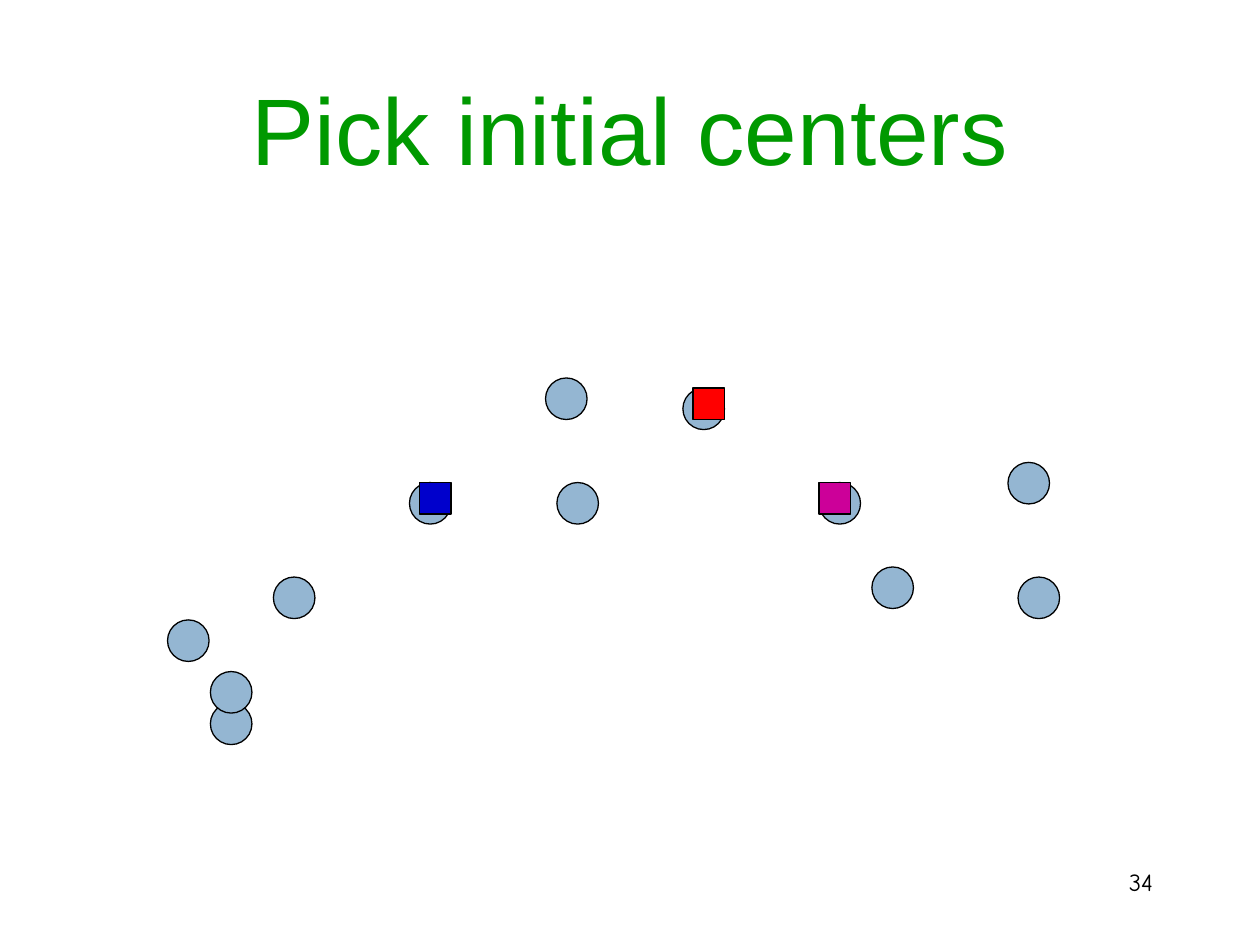
import pptx
import pptx.dml.color
import pptx.enum.shapes
import pptx.enum.text
import pptx.util

Inches = pptx.util.Inches
Shape = pptx.enum.shapes.MSO_SHAPE
Align = pptx.enum.text.PP_ALIGN
Anchor = pptx.enum.text.MSO_ANCHOR

POINT_SIZE = 0.33
CENTER_SIZE = 0.25
POINTS = [
    (1.67, 5.58), (1.33, 4.92), (2.17, 4.58), (8, 3.67),
    (4.33, 3), (5.42, 3.08), (4.42, 3.83), (3.25, 3.83),
    (8.08, 4.58), (6.5, 3.83), (1.67, 5.33), (6.92, 4.5),
]
CENTERS = [
    (3.33, 3.83, "0000CC"),
    (5.5, 3.08, "FF0000"),
    (6.5, 3.83, "CC0099"),
]


def color(hex_value):
    return pptx.dml.color.RGBColor.from_string(hex_value)


class ClusterSlide:
    """Draws text and markers on one slide in a shared style."""

    outline = "000000"
    outline_width = 0.75

    def __init__(self, slide):
        self.slide = slide

    def text(self, box, words, font, align, anchor):
        frame = self.slide.shapes.add_textbox(*map(Inches, box)).text_frame
        frame.word_wrap = True
        frame.vertical_anchor = anchor
        paragraph = frame.paragraphs[0]
        paragraph.alignment = align
        run = paragraph.add_run()
        run.text = words
        run.font.color.rgb = color(font["color"])
        for name, value in font["format"].items():
            setattr(run.font, name, value)

    def marker(self, kind, left, top, size, fill):
        marker = self.slide.shapes.add_shape(
            kind, Inches(left), Inches(top), Inches(size), Inches(size))
        marker.shadow.inherit = False
        marker.fill.solid()
        marker.fill.fore_color.rgb = color(fill)
        marker.line.color.rgb = color(self.outline)
        marker.line.width = pptx.util.Pt(self.outline_width)


def main():
    deck = pptx.Presentation()
    deck.slide_width, deck.slide_height = Inches(10), Inches(7.5)
    clusters = ClusterSlide(deck.slides.add_slide(deck.slide_layouts[6]))

    title_font = {"color": "009900",
                  "format": {"name": "Arial", "size": pptx.util.Pt(54)}}
    number_font = {"color": "000000",
                   "format": {"name": "Comic Neue", "size": pptx.util.Pt(14)}}
    clusters.text((0.75, 0.39, 8.5, 1.25), "Pick initial centers",
                  title_font, Align.CENTER, Anchor.MIDDLE)
    clusters.text((7.17, 6.83, 2.08, 0.5), "34",
                  number_font, Align.RIGHT, Anchor.TOP)

    for left, top in POINTS:
        clusters.marker(Shape.OVAL, left, top, POINT_SIZE, "94B6D2")
    for left, top, fill in CENTERS:
        clusters.marker(Shape.RECTANGLE, left, top, CENTER_SIZE, fill)

    deck.save("out.pptx")


if __name__ == "__main__":
    main()
